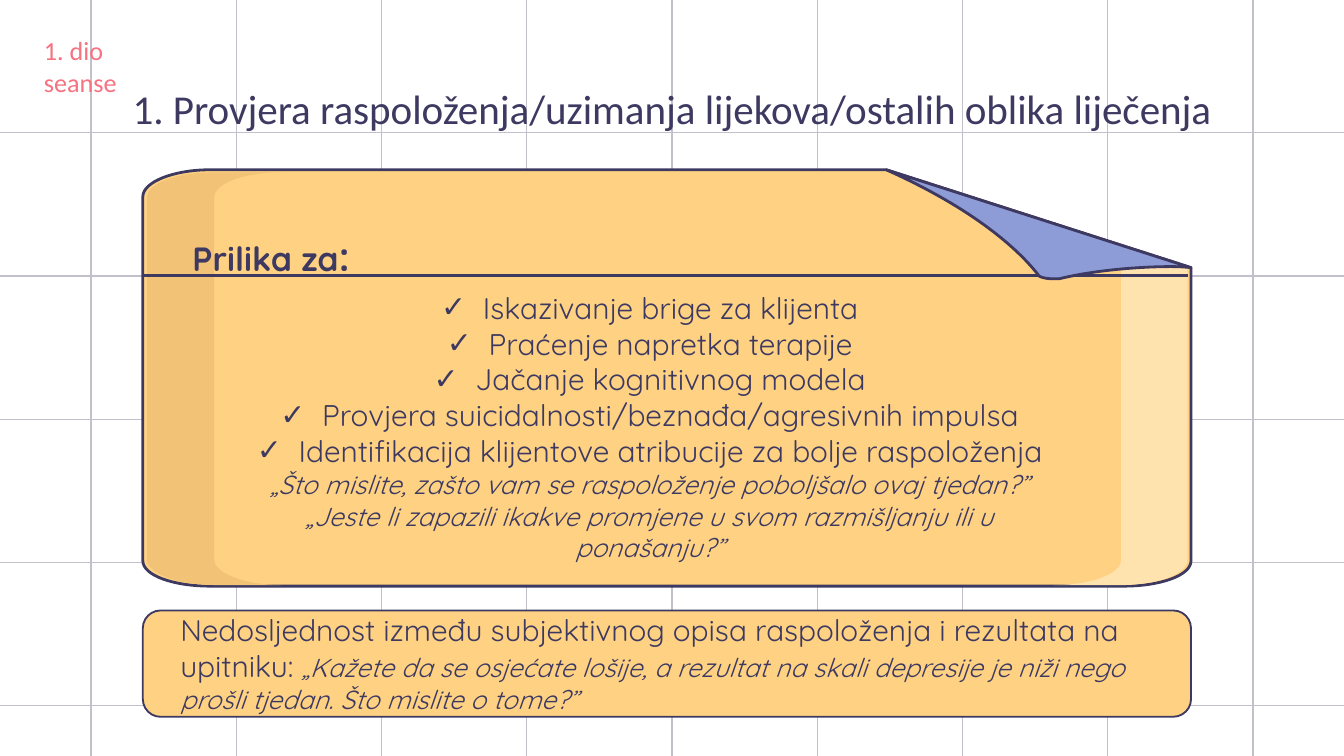
from lxml import etree
from pptx import Presentation
from pptx.dml.color import RGBColor
from pptx.enum.shapes import MSO_CONNECTOR, MSO_SHAPE
from pptx.enum.text import MSO_ANCHOR, PP_ALIGN
from pptx.oxml.ns import qn
from pptx.util import Cm, Pt

STRAIGHT = MSO_CONNECTOR.STRAIGHT
ROUNDED = MSO_SHAPE.ROUNDED_RECTANGLE
TOP, MIDDLE = MSO_ANCHOR.TOP, MSO_ANCHOR.MIDDLE
LEFT, CENTER = PP_ALIGN.LEFT, PP_ALIGN.CENTER

WIDTH, HEIGHT = 25.4, 14.29
INK, GRID, CORAL = "3D3961", "C2C1CB", "F67280"
PAPER, SHADE, LIGHT, FOLD = "FFD283", "F2C277", "FFE3AF", "8D9BD6"
BODY_FONT, HEAD_FONT = "Quicksand", "Calibri"

PAPER_OUTLINE = [
    (18.54, 7.87), (19.23, 7.87, 19.81, 7.67, 19.81, 7.39), (19.81, 6.6),
    (19.81, 1.85), (14.05, 0), (1.27, 0), (0.58, 0, 0, 0.23, 0, 0.51),
    (0, 6.6), (0, 7.39), (0, 7.67, 0.58, 7.87, 1.27, 7.87),
]
SHADE_OUTLINE = [
    (2.62, 7.85), (1.91, 7.85, 1.35, 7.62, 1.35, 7.37), (1.35, 6.58),
    (1.35, 0.53), (1.35, 0.25, 1.91, 0.05, 2.62, 0.05),
    (1.35, 0.05), (0.64, 0.05, 0.08, 0.25, 0.08, 0.53), (0.08, 6.58),
    (0.08, 7.37), (0.08, 7.62, 0.64, 7.85, 1.35, 7.85),
]
LIGHT_OUTLINE = [
    (18.49, 7.85), (19.15, 7.85, 19.74, 7.65, 19.74, 7.37), (19.74, 6.6),
    (19.74, 1.88), (18.49, 1.5), (18.49, 6.6), (18.49, 7.37),
    (18.49, 7.65, 17.91, 7.85, 17.22, 7.85),
]
FOLD_OUTLINE = [
    (17.17, 2.06), (17.22, 2.06, 17.27, 2.06, 17.32, 2.06),
    (18.06, 1.88, 18.95, 1.83, 19.43, 1.83),
    (19.66, 1.83, 19.81, 1.85, 19.81, 1.85), (14.05, 0),
    (15.93, 0.84, 16.69, 1.68, 16.94, 2.01),
    (16.97, 2.03, 17.07, 2.06, 17.17, 2.06),
]

OPPORTUNITIES = [
    "Iskazivanje brige za klijenta",
    "Praćenje napretka terapije",
    "Jačanje kognitivnog modela",
    "Provjera suicidalnosti/beznađa/agresivnih impulsa",
    "Identifikacija klijentove atribucije za bolje raspoloženja",
]
QUESTIONS = [
    "„Što mislite, zašto vam se raspoloženje poboljšalo ovaj tjedan?”",
    "„Jeste li zapazili ikakve promjene u svom razmišljanju ili u ponašanju?”",
]


def color(value):
    return RGBColor.from_string(value)


def paint(shape, fill, line=None, width=1.5):
    shape.shadow.inherit = False
    shape.fill.solid()
    shape.fill.fore_color.rgb = color(fill)
    if line:
        shape.line.color.rgb = color(line)
        shape.line.width = Pt(width)
    else:
        shape.line.fill.background()


def add_line(slide, start, end, line, width):
    connector = slide.shapes.add_connector(
        STRAIGHT, Cm(start[0]), Cm(start[1]), Cm(end[0]), Cm(end[1]))
    connector.line.color.rgb = color(line)
    connector.line.width = Pt(width)
    etree.SubElement(connector._element.spPr, qn("a:effectLst"))


def add_outline(slide, left, top, outline, fill, line=None):
    ends = [(Cm(left + segment[-2]), Cm(top + segment[-1])) for segment in outline]
    builder = slide.shapes.build_freeform(*ends[0])
    builder.add_line_segments(ends[1:], close=True)
    shape = builder.convert_to_shape()
    straight_parts = list(shape._element.iter(qn("a:lnTo")))
    for segment, part in zip(outline[1:], straight_parts):
        if len(segment) == 6:
            part.addprevious(curve := etree.Element(qn("a:cubicBezTo")))
            for x, y in zip(segment[::2], segment[1::2]):
                etree.SubElement(curve, qn("a:pt"),
                                 x=str(Cm(left + x) - shape.left),
                                 y=str(Cm(top + y) - shape.top))
            part.getparent().remove(part)
    paint(shape, fill, line)


def add_box(slide, left, top, width, height):
    return slide.shapes.add_textbox(Cm(left), Cm(top), Cm(width), Cm(height))


def set_frame(shape, anchor=MIDDLE, side=0.0, end=0.0):
    frame = shape.text_frame
    frame.word_wrap = True
    frame.vertical_anchor = anchor
    frame.margin_left = frame.margin_right = Cm(side)
    frame.margin_top = frame.margin_bottom = Cm(end)
    return frame


def write(paragraph, text, size=16, font=BODY_FONT, ink=INK, bold=False,
          italic=False, align=CENTER):
    paragraph.alignment = align
    run = paragraph.add_run()
    run.text = text
    run.font.size = Pt(size)
    run.font.name = font
    run.font.color.rgb = color(ink)
    run.font.bold = bold
    run.font.italic = italic


def set_indent(paragraph, margin, first=0.0, bullet=None):
    properties = paragraph._p.get_or_add_pPr()
    properties.set("marL", str(Cm(margin)))
    properties.set("indent", str(Cm(first)))
    if bullet:
        bullet_color = etree.SubElement(properties, qn("a:buClr"))
        etree.SubElement(bullet_color, qn("a:srgbClr"), val=INK)
        etree.SubElement(properties, qn("a:buFont"), typeface="Arial")
        etree.SubElement(properties, qn("a:buChar"), char=bullet)


def add_grid(slide, width, height):
    overhang = 0.46
    for column in range(9):
        x = 1.72 + 21.96 * column / 8
        add_line(slide, (x, -overhang), (x, height + overhang), GRID, 0.75)
    for row in range(5):
        y = 2.51 + 10.83 * row / 4
        add_line(slide, (-overhang, y), (width + overhang, y), GRID, 0.75)


def add_heading(slide, left, top):
    title = set_frame(add_box(slide, left + 1.42, top + 0.71, 21.41, 1.6))
    write(title.paragraphs[0],
          "1. Provjera raspoloženja/uzimanja lijekova/ostalih oblika liječenja",
          size=22, font=HEAD_FONT)
    part = set_frame(add_box(slide, left, top, 3.02, 0.86), TOP, 0.25, 0.13)
    write(part.paragraphs[0], "1. dio seanse", size=14, font=HEAD_FONT,
          ink=CORAL, align=LEFT)


def add_paper(slide, left, top):
    add_outline(slide, left, top, PAPER_OUTLINE, PAPER, INK)
    add_outline(slide, left, top, SHADE_OUTLINE, SHADE)
    add_outline(slide, left, top, LIGHT_OUTLINE, LIGHT)
    add_line(slide, (left, top + 1.99), (left + 19.76, top + 1.99), INK, 1.5)
    add_outline(slide, left, top, FOLD_OUTLINE, FOLD, INK)

    label = set_frame(add_box(slide, left + 0.43, top + 0.91, 3.99, 1.42))
    write(label.paragraphs[0], "Prilika za", size=18, bold=True)
    write(label.paragraphs[0], ":", size=22, bold=True)

    frame = set_frame(add_box(slide, left + 1.73, top + 2.14, 15.7, 5.41))
    for index, text in enumerate(OPPORTUNITIES + QUESTIONS):
        paragraph = frame.add_paragraph() if index else frame.paragraphs[0]
        if text in OPPORTUNITIES:
            set_indent(paragraph, 0.79, -0.79, "✓")
            write(paragraph, text)
        else:
            write(paragraph, text, size=14, italic=True)


def add_note(slide, left, top, width, height):
    note = slide.shapes.add_shape(ROUNDED, Cm(left), Cm(top), Cm(width), Cm(height))
    paint(note, PAPER, INK, 1)
    paragraph = set_frame(note, side=0.25, end=0.25).paragraphs[0]
    set_indent(paragraph, 0.36)
    write(paragraph, "Nedosljednost između subjektivnog opisa raspoloženja "
          "i rezultata na upitniku: ", align=LEFT)
    write(paragraph, "„Kažete da se osjećate lošije, a rezultat na skali depresije "
          "je niži nego prošli tjedan. Što mislite o tome?”",
          size=14, italic=True, align=LEFT)


def main():
    presentation = Presentation()
    presentation.slide_width = Cm(WIDTH)
    presentation.slide_height = Cm(HEIGHT)
    slide = presentation.slides.add_slide(presentation.slide_layouts[6])
    add_grid(slide, WIDTH, HEIGHT)
    add_paper(slide, 2.7, 3.21)
    add_heading(slide, 0.58, 0.53)
    add_note(slide, 2.7, 11.54, 19.81, 2.01)
    presentation.save("out.pptx")


if __name__ == "__main__":
    main()
